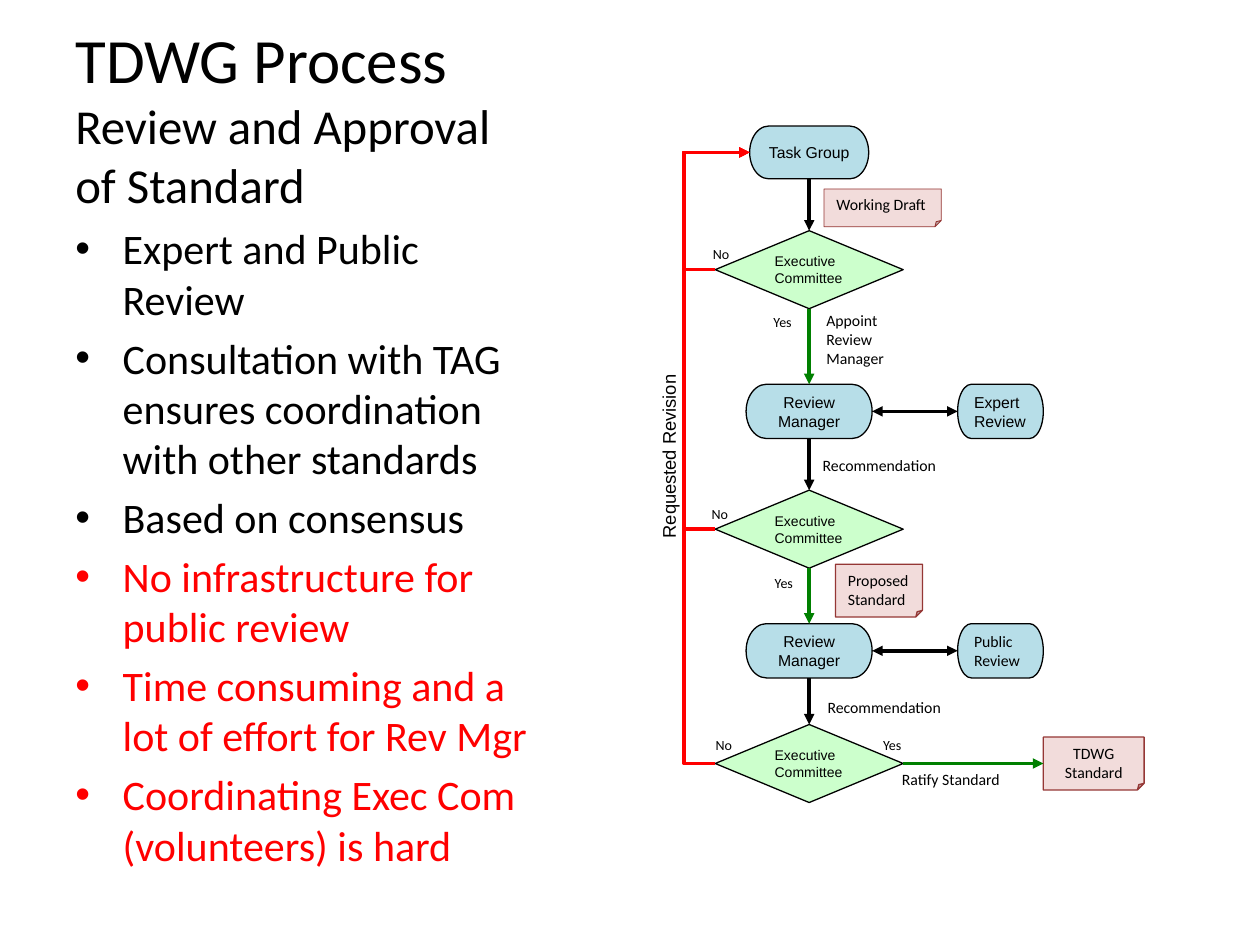
import pptx
import pptx.dml.color
import pptx.enum.shapes
import pptx.enum.text
import pptx.util
from lxml import etree

Pt = pptx.util.Pt
color = pptx.dml.color.RGBColor.from_string
SHAPE = pptx.enum.shapes.MSO_SHAPE
CONNECTOR = pptx.enum.shapes.MSO_CONNECTOR
ANCHOR = pptx.enum.text.MSO_ANCHOR
CENTER = pptx.enum.text.PP_ALIGN.CENTER
LEFT = pptx.enum.text.PP_ALIGN.LEFT
NAMESPACE = "http://schemas.openxmlformats.org/drawingml/2006/main"
TOP_SIDE, LEFT_SIDE, BOTTOM_SIDE, RIGHT_SIDE = range(4)


def write_text(shape, text, size, font_name, alignment=LEFT, **frame_format):
    frame = shape.text_frame
    for name, value in {"word_wrap": True, **frame_format}.items():
        setattr(frame, name, value)
    paragraph = frame.paragraphs[0]
    paragraph.text = text
    paragraph.alignment = alignment
    for run in paragraph.runs:
        font_format = {"size": Pt(size), "name": font_name}
        for name, value in font_format.items():
            setattr(run.font, name, value)
        run.font.color.rgb = color("000000")


def style_connector(connector, line_color, ends):
    """Colour the line and put triangles at the named ends (headEnd, tailEnd)."""
    connector.line.width = Pt(2)
    connector.line.color.rgb = color(line_color)
    line = connector.line._get_or_add_ln()
    for end in ends:
        etree.SubElement(line, f"{{{NAMESPACE}}}{end}", type="triangle")
    etree.SubElement(connector._element.spPr, f"{{{NAMESPACE}}}effectLst")


presentation = pptx.Presentation()
presentation.slide_width = Pt(720)
presentation.slide_height = Pt(540)
slide = presentation.slides.add_slide(presentation.slide_layouts[6])
shapes = slide.shapes

# Title
title = shapes.add_textbox(Pt(36), Pt(21.6), Pt(648), Pt(90))
write_text(title, "TDWG Process\nReview and Approval\nof Standard", 27.9, "Calibri",
           vertical_anchor=ANCHOR.MIDDLE)
title.text_frame.paragraphs[0].runs[0].font.size = Pt(36)

# Bulleted list
body = shapes.add_textbox(Pt(36), Pt(123.8), Pt(282.2), Pt(356.4))
body.text_frame.word_wrap = True
bullets = [
    ("Expert and Public Review", "000000"),
    ("Consultation with TAG ensures coordination with other standards", "000000"),
    ("Based on consensus", "000000"),
    ("No infrastructure for public review", "FF0000"),
    ("Time consuming and a lot of effort for Rev Mgr", "FF0000"),
    ("Coordinating Exec Com (volunteers) is hard", "FF0000"),
]
for index, (text, text_color) in enumerate(bullets):
    frame = body.text_frame
    paragraph = frame.add_paragraph() if index else frame.paragraphs[0]
    paragraph.text = text
    paragraph.space_before = Pt(4.8)
    for name, value in {"size": Pt(24), "name": "Calibri"}.items():
        setattr(paragraph.runs[0].font, name, value)
    paragraph.runs[0].font.color.rgb = color(text_color)
    properties = paragraph._p.get_or_add_pPr()
    properties.set("marL", str(Pt(27)))
    properties.set("indent", str(-Pt(27)))
    etree.SubElement(properties, f"{{{NAMESPACE}}}buFont", typeface="Arial")
    etree.SubElement(properties, f"{{{NAMESPACE}}}buChar", char="•")

# Flowchart nodes: the main column is centred on one axis
AXIS = 462.4
step_style = (SHAPE.FLOWCHART_TERMINATOR, "B7DEE8", "000000", 0.75)
decision_style = (SHAPE.DIAMOND, "CCFFCC", "000000", 0.75)
note_style = (SHAPE.FOLDED_CORNER, "F2DCDB", "953735", 0.75)
draft_style = (SHAPE.FOLDED_CORNER, "F2DCDB", "953735", 0.5)
middle = {"vertical_anchor": ANCHOR.MIDDLE}
middle_unwrapped = {**middle, "word_wrap": False}
centered = {**middle, "alignment": CENTER}
top_left = {"vertical_anchor": ANCHOR.TOP}
nodes = {
    "task group": (step_style, AXIS - 34, 72, 68, 30.2, "Task Group", 9, "Arial", centered),
    "expert review": (step_style, 547.2, 219.6, 49, 31, "Expert\nReview", 9, "Arial",
                      middle_unwrapped),
    "public review": (step_style, 547.2, 356.4, 49, 31, "Public\nReview", 9, "Calibri",
                      middle_unwrapped),
    "working draft": (draft_style, 470.9, 108, 67, 21.6, "Working Draft", 9, "Calibri",
                      {**top_left, "word_wrap": False}),
    "proposed standard": (note_style, 477.4, 322.4, 49.7, 30.2, "Proposed\nStandard", 9,
                          "Calibri", top_left),
    "final standard": (note_style, 596.2, 421.2, 57.6, 30.2, "TDWG\nStandard", 9, "Calibri",
                       {**top_left, "alignment": CENTER}),
}
for number, top in enumerate([219.6, 356.4], 1):
    nodes[f"manager {number}"] = (step_style, AXIS - 36, top, 72, 31, "Review Manager", 9,
                                  "Arial", centered)
for number, top in enumerate([131.8, 280.1, 414], 1):
    nodes[f"committee {number}"] = (decision_style, AXIS - 53.7, top, 107.4, 44.6,
                                    "Executive\nCommittee", 8, "Arial", middle)

node_shapes = {}
adjusted = []
for key, (style, left, top, width, height, text, size, font_name, options) in nodes.items():
    geometry, fill_color, line_color, line_width = style
    shape = shapes.add_shape(geometry, Pt(left), Pt(top), Pt(width), Pt(height))
    shape.shadow.inherit = False
    shape.fill.solid()
    shape.fill.fore_color.rgb = color(fill_color)
    shape.line.color.rgb = color(line_color)
    shape.line.width = Pt(line_width)
    if style is note_style:
        adjusted.append((shape, "adj", 12500))
    write_text(shape, text, size, font_name, **options)
    node_shapes[key] = shape

# Straight arrows
one_way = ["tailEnd"]
two_way = ["headEnd", "tailEnd"]
downward = (BOTTOM_SIDE, TOP_SIDE)
rightward = (RIGHT_SIDE, LEFT_SIDE)
arrows = [
    ("task group", "committee 1", downward, "000000", one_way),
    ("committee 1", "manager 1", downward, "008000", one_way),
    ("manager 1", "committee 2", downward, "000000", one_way),
    ("committee 2", "manager 2", downward, "008000", one_way),
    ("manager 2", "committee 3", downward, "000000", one_way),
    ("manager 1", "expert review", rightward, "000000", two_way),
    ("manager 2", "public review", rightward, "000000", two_way),
    ("committee 3", "final standard", rightward, "008000", one_way),
]
for start, finish, (start_side, finish_side), line_color, ends in arrows:
    connector = shapes.add_connector(CONNECTOR.STRAIGHT, 0, 0, 0, 0)
    connector.begin_connect(node_shapes[start], start_side)
    connector.end_connect(node_shapes[finish], finish_side)
    style_connector(connector, line_color, ends)

# Revision loops from each committee back to the task group
task_group = node_shapes["task group"]
for number in (1, 2, 3):
    committee = node_shapes[f"committee {number}"]
    connector = shapes.add_connector(
        CONNECTOR.ELBOW, committee.left, committee.top + committee.height // 2,
        task_group.left, task_group.top + task_group.height // 2)
    style_connector(connector, "FF0000", one_way)
    adjusted.append((connector, "adj1", -91100))

# Size of the folded corners and reach of the loops
for shape, name, value in adjusted:
    guides = shape._element.spPr.find(f".//{{{NAMESPACE}}}avLst")
    etree.SubElement(guides, f"{{{NAMESPACE}}}gd", name=name, fmla=f"val {value}")

# Labels
labels = [
    ("Recommendation", 463, 257, 85, 18, 9),
    ("Recommendation", 465.8, 395.3, 85, 18, 9),
    ("Appoint\nReview\nManager", 465.1, 174.2, 49.7, 39.6, 9),
    ("Ratify Standard", 508.3, 436.3, 76.3, 18, 9),
    ("No", 400.3, 136.8, 24.5, 16.6, 8),
    ("No", 399.6, 285.1, 24.5, 16.6, 8),
    ("No", 401.8, 417.6, 24.5, 16.6, 8),
    ("Yes", 434.9, 175.7, 28.1, 16.6, 8),
    ("Yes", 435.6, 324.7, 28.1, 16.6, 8),
    ("Yes", 497.5, 417.6, 28.1, 16.6, 8),
]
for text, left, top, width, height, size in labels:
    label = shapes.add_textbox(Pt(left), Pt(top), Pt(width), Pt(height))
    write_text(label, text, size, "Calibri", word_wrap=False)

revision = shapes.add_textbox(Pt(294.5), Pt(219.6), Pt(175.7), Pt(20.2))
revision.rotation = 270
write_text(revision, " Requested Revision", 10.5, "Arial")

presentation.save("out.pptx")
